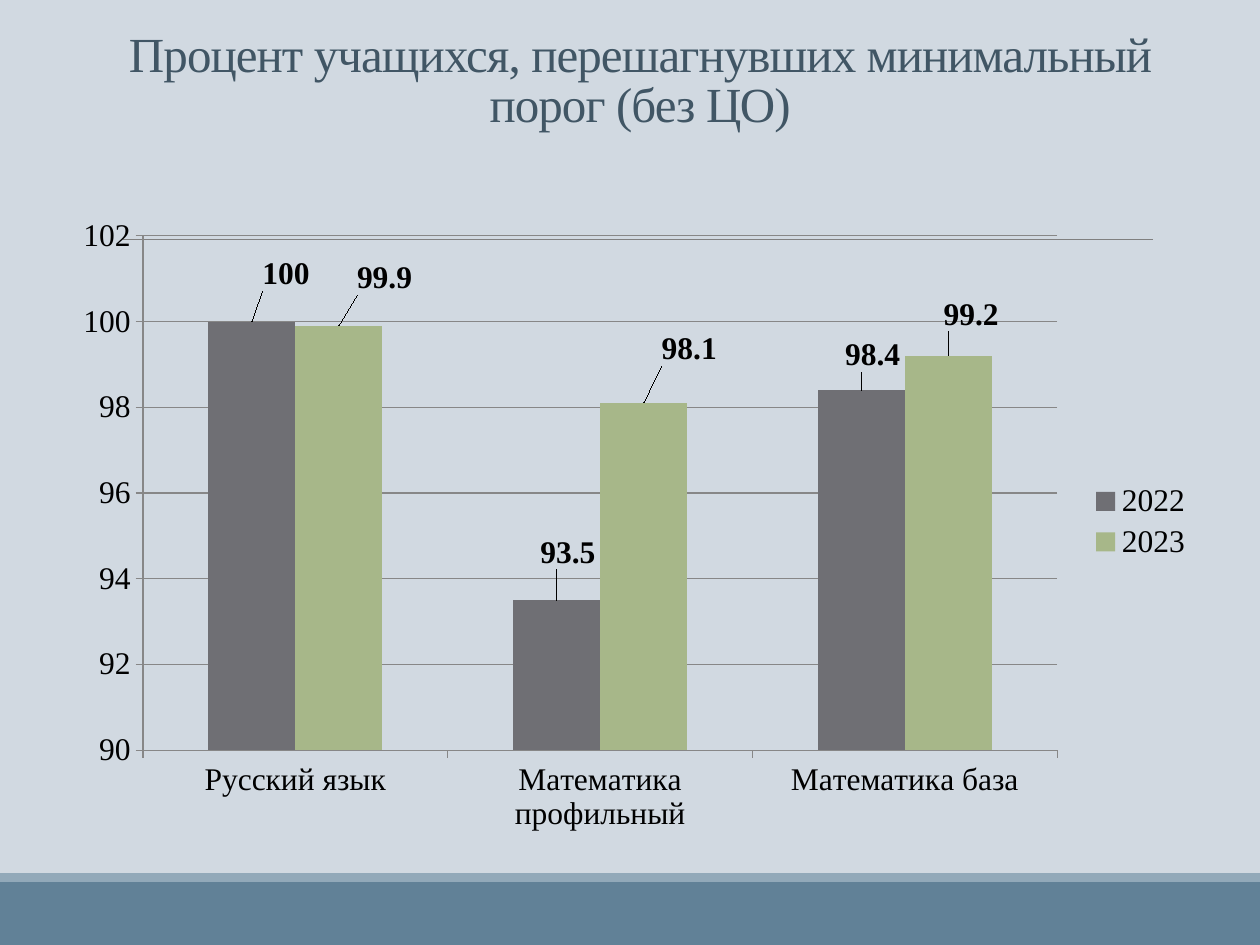
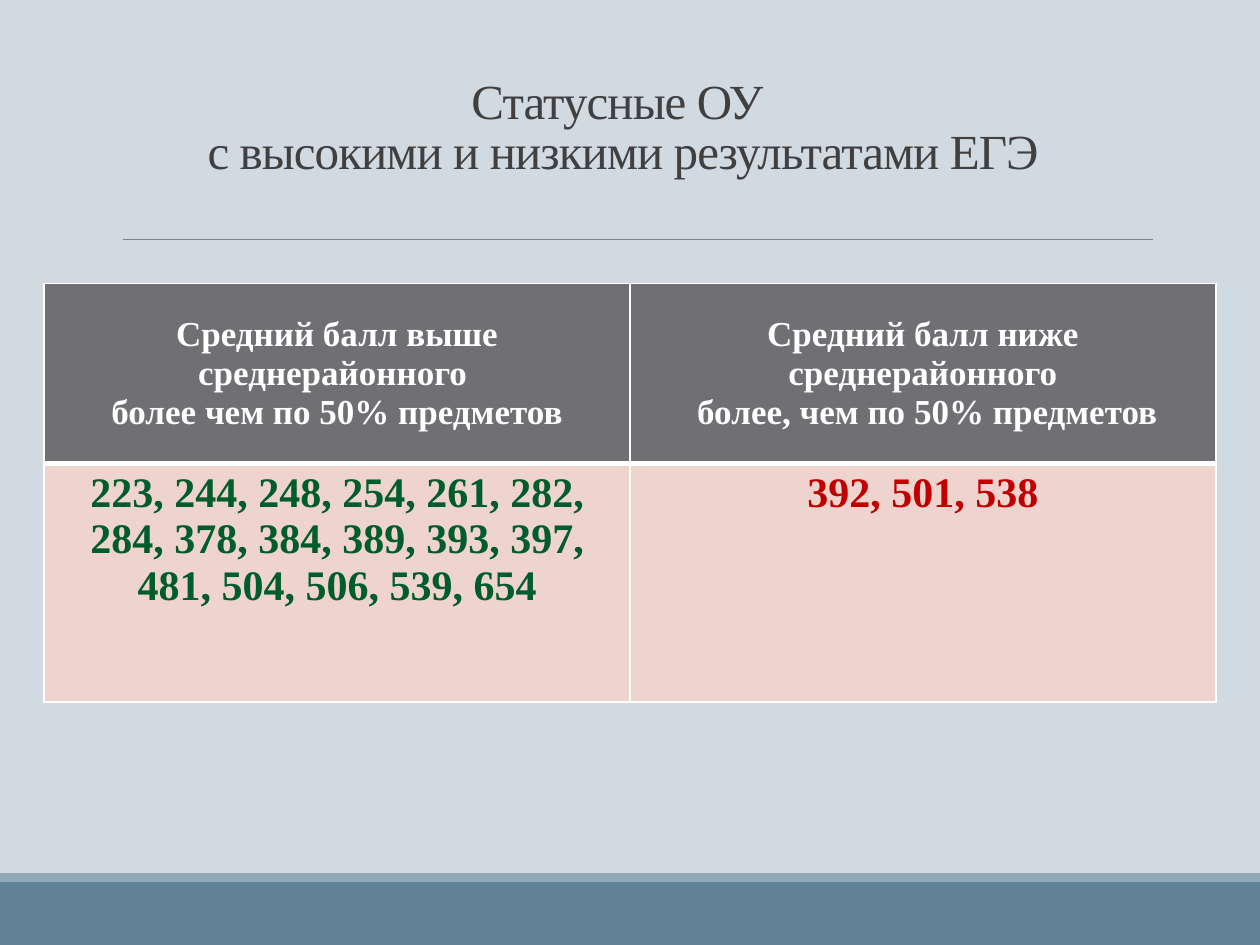
from dataclasses import dataclass

from lxml import etree
from pptx import Presentation
from pptx import util as u
from pptx.chart.data import CategoryChartData
from pptx.dml.color import RGBColor
from pptx.enum import chart as ch
from pptx.enum import shapes, text
from pptx.oxml import parse_xml
from pptx.oxml.ns import nsdecls, qn


@dataclass(frozen=True)
class Theme:
    """Colours, font and type sizes of the deck."""
    back: str = "D1D9E1"
    band: str = "618197"
    strip: str = "92A9B9"
    rule: str = "808080"
    grid: str = "878787"
    slate: str = "415665"
    dark: str = "404040"
    black: str = "000000"
    white: str = "FFFFFF"
    gray: str = "6F6F74"
    sage: str = "A7B789"
    rose: str = "EED3CF"
    green: str = "005C2A"
    red: str = "C00000"
    font: str = "Times New Roman"
    title: int = 28
    body: int = 24
    head: int = 20
    label: int = 18


T = Theme()
PLOT = (0.07, 0.05, 0.8, 0.81)
SUBJECTS = ["Русский язык", "Математика профильный", "Математика база"]
YEARS = [
    ("2022", T.gray, [100, 93.5, 98.4],
     [(0.03, -0.04), (0.01, -0.04), (0.01, -0.02)]),
    ("2023", T.sage, [99.9, 98.1, 99.2],
     [(0.04, -0.04), (0.04, -0.05), (0.02, -0.03)]),
]
HEADS = [
    ["Средний балл выше среднерайонного ", "более чем по 50% предметов"],
    ["Средний балл ниже среднерайонного", " более, чем по 50% предметов"],
]
SCHOOLS = [
    ("223, 244, 248, 254, 261, 282, 284, 378, 384, 389, 393, 397, "
     "481, 504, 506, 539, 654", T.green),
    ("392, 501, 538", T.red),
]


def rgb(code):
    """Turn a hex code into a colour."""
    return RGBColor.from_string(code)


def inch(box):
    """Turn a box of numbers into lengths."""
    return [u.Inches(n) for n in box]


def style(font, size, color, bold=False):
    """Set the face, size, colour and weight of a font."""
    font.name, font.size, font.bold = T.font, u.Pt(size), bold
    font.color.rgb = rgb(color)


def add_bar(slide, box, color):
    """Draw a plain filled band."""
    bar = slide.shapes.add_shape(shapes.MSO_SHAPE.RECTANGLE, *inch(box))
    bar.shadow.inherit = False
    bar.fill.solid()
    bar.fill.fore_color.rgb = rgb(color)
    bar.line.fill.background()


def add_rule(slide, left, right, top):
    """Draw the thin rule below the title."""
    rule = slide.shapes.add_connector(
        shapes.MSO_CONNECTOR.STRAIGHT, *inch((left, top, right, top)))
    rule.line.color.rgb = rgb(T.rule)
    rule.line.width = u.Pt(0.5)
    etree.SubElement(rule._element.spPr, qn("a:effectLst"))


def add_page(deck):
    """Add a slide with the shared background, bands and rule."""
    slide = deck.slides.add_slide(deck.slide_layouts[6])
    fill = slide.background.fill
    fill.solid()
    fill.fore_color.rgb = rgb(T.back)
    add_bar(slide, (0, 7, 10, 0.5), T.band)
    add_bar(slide, (0, 6.93, 10, 0.07), T.strip)
    add_rule(slide, 0.98, 9.15, 1.9)
    return slide


def add_title(slide, box, lines, color, foot=0.05):
    """Place a centred title that rests on the bottom of its box."""
    frame = slide.shapes.add_textbox(*inch(box)).text_frame
    frame.word_wrap = True
    frame.vertical_anchor = text.MSO_ANCHOR.BOTTOM
    frame.margin_bottom = u.Inches(foot)
    para = frame.paragraphs[0]
    para.alignment = text.PP_ALIGN.CENTER
    para.line_spacing = 0.85
    for i, line in enumerate(lines):
        if i:
            para.add_line_break()
        run = para.add_run()
        run.text = line
        style(run.font, T.title, color)
        run._r.get_or_add_rPr().set("spc", "-50")


def make_layout(**parts):
    """Build a manual chart layout element."""
    rows = "".join(f'<c:{k} val="{v}"/>' for k, v in parts.items())
    return parse_xml(f'<c:layout {nsdecls("c")}><c:manualLayout>{rows}'
                     '</c:manualLayout></c:layout>')


def set_plot(chart):
    """Fix the inner plot area within the chart."""
    area = chart._chartSpace.chart.plotArea
    for old in area.findall(qn("c:layout")):
        area.remove(old)
    x, y, w, h = PLOT
    area.insert(0, make_layout(layoutTarget="inner", xMode="edge",
                               yMode="edge", x=x, y=y, w=w, h=h))


def set_axes(chart):
    """Set the scale, grid and lines of both axes."""
    scale = chart.value_axis
    scale.minimum_scale, scale.maximum_scale, scale.major_unit = 90, 102, 2
    scale.has_major_gridlines = True
    for axis in (chart.category_axis, scale):
        axis.major_tick_mark = ch.XL_TICK_MARK.OUTSIDE
        style(axis.tick_labels.font, T.label, T.black)
    for owner in (chart.category_axis, scale, scale.major_gridlines):
        owner.format.line.color.rgb = rgb(T.grid)
        owner.format.line.width = u.Pt(0.75)


def set_bars(series, color, shifts):
    """Colour one series and shift its value labels."""
    series.format.fill.solid()
    series.format.fill.fore_color.rgb = rgb(color)
    series.invert_if_negative = False
    for i in range(len(shifts)):
        label = series.points[i].data_label
        style(label.font, T.label, T.black, True)
        label.position = ch.XL_LABEL_POSITION.OUTSIDE_END
    for node, (x, y) in zip(series._element.xpath(".//c:dLbl"), shifts):
        node.insert(1, make_layout(x=x, y=y))


def add_bars(slide, box):
    """Place the column chart of both years."""
    data = CategoryChartData()
    data.categories = SUBJECTS
    for name, _, vals, _ in YEARS:
        data.add_series(name, vals)
    chart = slide.shapes.add_chart(
        ch.XL_CHART_TYPE.COLUMN_CLUSTERED, *inch(box), data).chart
    chart.has_title = False
    style(chart.font, T.label, T.black)
    chart.has_legend = True
    chart.legend.position = ch.XL_LEGEND_POSITION.RIGHT
    chart.legend.include_in_layout = False
    style(chart.legend.font, T.label, T.black)
    plot = chart.plots[0]
    plot.gap_width, plot.overlap, plot.vary_by_categories = 150, 0, False
    set_axes(chart)
    set_plot(chart)
    for series, (_, color, _, shifts) in zip(plot.series, YEARS):
        set_bars(series, color, shifts)


def set_edges(cell, **widths):
    """Draw white borders of the given widths in points."""
    props = cell._tc.get_or_add_tcPr()
    for i, (side, width) in enumerate(widths.items()):
        props.insert(i, parse_xml(
            f'<a:ln{side} {nsdecls("a")} w="{u.Pt(width)}"><a:solidFill>'
            f'<a:srgbClr val="{T.white}"/></a:solidFill></a:ln{side}>'))


def fill_cell(cell, lines, size, color, back):
    """Fill a cell with centred bold lines."""
    cell.fill.solid()
    cell.fill.fore_color.rgb = rgb(back)
    frame = cell.text_frame
    for i, line in enumerate(lines):
        para = frame.add_paragraph() if i else frame.paragraphs[0]
        para.alignment = text.PP_ALIGN.CENTER
        run = para.add_run()
        run.text = line
        style(run.font, size, color, True)


def add_grid(slide, box, rows):
    """Place the table of schools above and below the mean."""
    grid = slide.shapes.add_table(2, len(HEADS), *inch(box)).table
    for row, height in zip(grid.rows, rows):
        row.height = u.Inches(height)
    for i, (lines, (codes, color)) in enumerate(zip(HEADS, SCHOOLS)):
        head, body = grid.cell(0, i), grid.cell(1, i)
        fill_cell(head, lines, T.head, T.white, T.gray)
        head.vertical_anchor = text.MSO_ANCHOR.MIDDLE
        set_edges(head, L=1, R=1, T=1, B=3)
        fill_cell(body, [codes], T.body, color, T.rose)
        set_edges(body, L=1, R=1, T=3, B=1)


def main():
    """Build and save the deck."""
    deck = Presentation()
    deck.slide_width, deck.slide_height = inch((10, 7.5))
    page = add_page(deck)
    add_title(page, (0.83, 0.36, 8.5, 1.18),
              ["Процент учащихся, перешагнувших минимальный порог (без ЦО)"],
              T.slate, 0.49)
    add_bars(page, (0.5, 1.62, 9.07, 5.04))
    page = add_page(deck)
    add_title(page, (0.28, 0.89, 9.33, 0.58),
              ["Статусные ОУ ", "с высокими и низкими результатами ЕГЭ"],
              T.dark)
    add_grid(page, (0.35, 2.25, 9.3, 3.32), (1.43, 1.89))
    deck.save("out.pptx")


if __name__ == "__main__":
    main()
